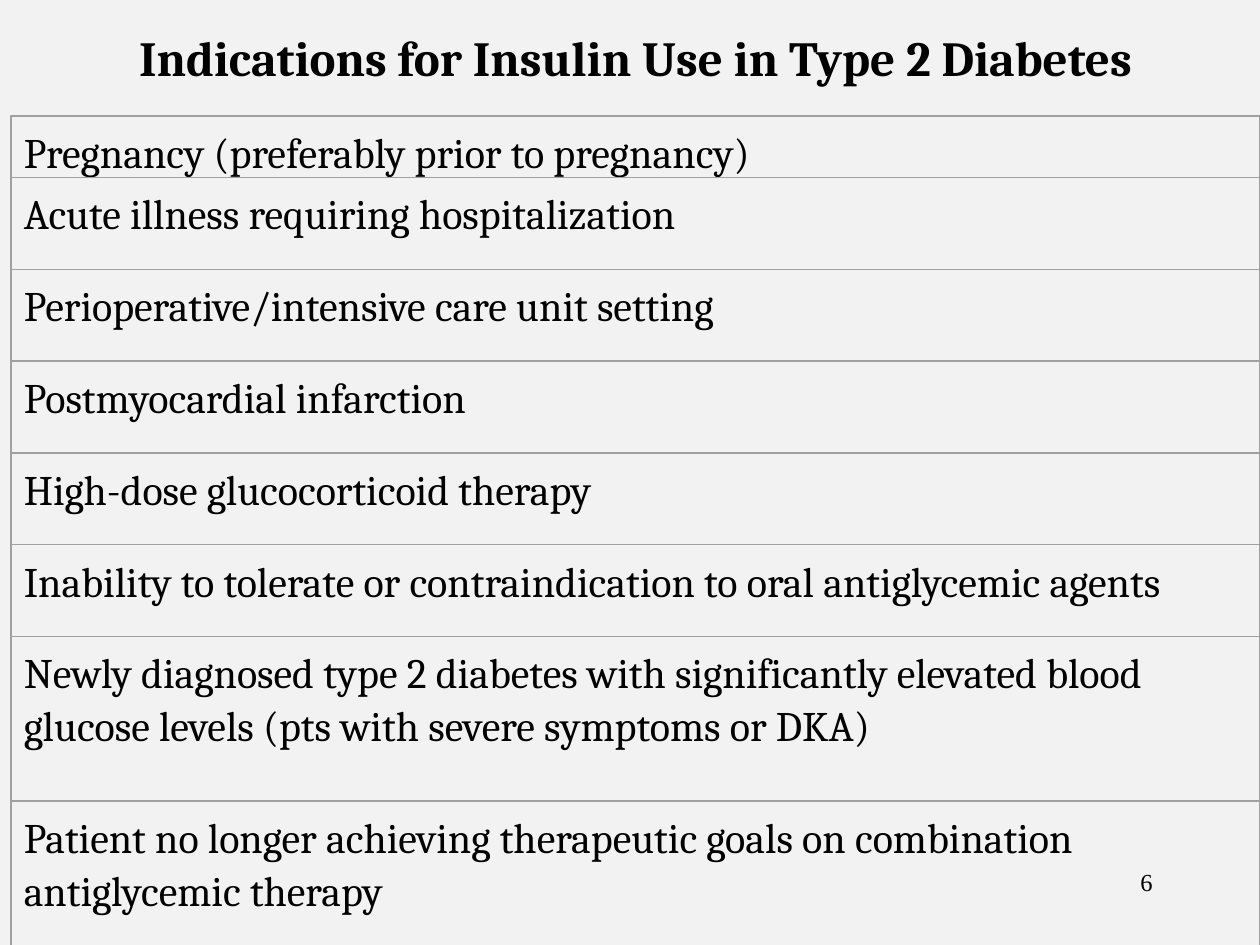
from pptx import Presentation
from pptx.dml.color import RGBColor
from pptx.enum.shapes import MSO_SHAPE
from pptx.enum.text import MSO_ANCHOR, MSO_AUTO_SIZE, PP_ALIGN
from pptx.util import Cm, Pt

COLORS = {"background": "F2F2F2", "text": "000000", "border": "A0A0A0"}
SINGLE, SPACED, DOUBLE = 1.24, 1.85, 3.32  # row heights in cm
LEFT, TOP, WIDTH = 0.23, 2.34, 25.17
INDICATIONS = [
    ("Pregnancy (preferably prior to pregnancy)", SINGLE),
    ("Acute illness requiring hospitalization", SPACED),
    ("Perioperative/intensive care unit setting", SPACED),
    ("Postmyocardial infarction", SPACED),
    ("High-dose glucocorticoid therapy", SPACED),
    ("Inability to tolerate or contraindication to oral antiglycemic agents", SPACED),
    ("Newly diagnosed type 2 diabetes with significantly elevated blood "
     "glucose levels (pts with severe symptoms or DKA)", DOUBLE),
    ("Patient no longer achieving therapeutic goals on combination "
     "antiglycemic therapy", DOUBLE),
]


def write(frame, text, size=24, font="Cambria", bold=False,
          align=PP_ALIGN.LEFT, spacing=1.0):
    frame.word_wrap = True
    frame.auto_size = MSO_AUTO_SIZE.NONE
    frame.vertical_anchor = MSO_ANCHOR.TOP
    paragraph = frame.paragraphs[0]
    paragraph.alignment = align
    paragraph.line_spacing = spacing
    run = paragraph.add_run()
    run.text = text
    run.font.size = Pt(size)
    run.font.name = font
    run.font.bold = bold
    run.font.color.rgb = RGBColor.from_string(COLORS["text"])


def add_outline(left, top, width, height, weight):
    """Add an unfilled rectangle, measured in cm, with a border in points."""
    outline = slide.shapes.add_shape(MSO_SHAPE.RECTANGLE, Cm(left), Cm(top),
                                     Cm(width), Cm(height))
    outline.shadow.inherit = False
    outline.fill.background()
    outline.line.color.rgb = RGBColor.from_string(COLORS["border"])
    outline.line.width = Pt(weight)
    return outline


prs = Presentation()
prs.slide_width, prs.slide_height = Cm(25.4), Cm(19.05)
slide = prs.slides.add_slide(prs.slide_layouts[5])
slide.background.fill.solid()
slide.background.fill.fore_color.rgb = RGBColor.from_string(COLORS["background"])

title = slide.shapes.title
title.left, title.top, title.width, title.height = Cm(0), Cm(0.43), Cm(25.4), Cm(1.85)
write(title.text_frame, " Indications for Insulin Use in Type 2 Diabetes",
      size=28, bold=True, align=PP_ALIGN.CENTER)

row_top = TOP
for indication, height in INDICATIONS:
    row = add_outline(LEFT, row_top, WIDTH, height, weight=0)
    row.text_frame.margin_top, row.text_frame.margin_bottom = Cm(0.16), Cm(0)
    write(row.text_frame, indication, spacing=1.05)
    row_top += height

add_outline(LEFT - 0.01, TOP, WIDTH + 0.02, row_top - TOP, weight=0.87)

page_number = slide.shapes.add_textbox(Cm(18.21), Cm(17.35), Cm(5.28), Cm(1.27))
write(page_number.text_frame, "6", size=14, font="Times New Roman", align=PP_ALIGN.RIGHT)

prs.save("out.pptx")
